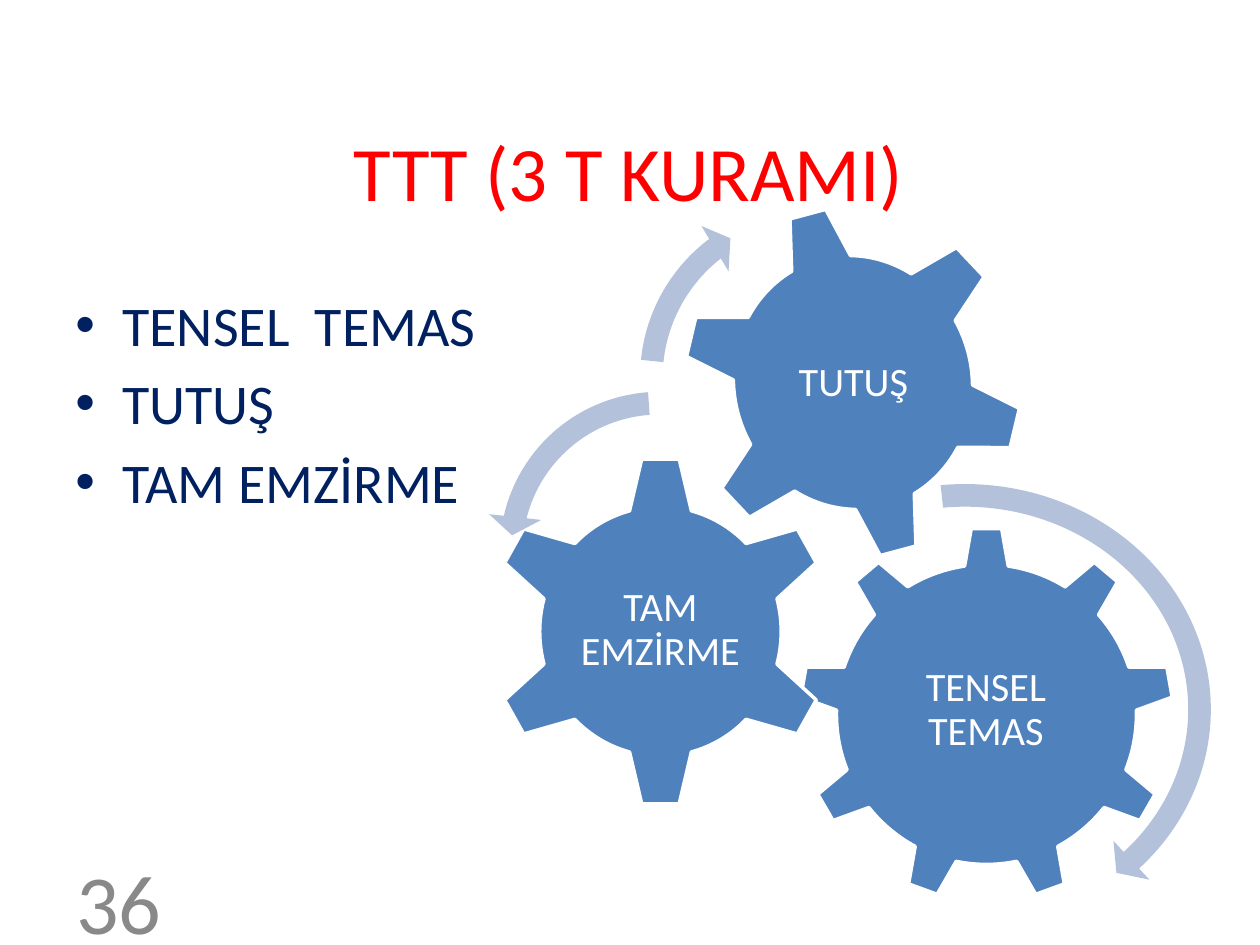
from dataclasses import dataclass

from lxml import etree
from pptx import Presentation
from pptx.dml.color import RGBColor
from pptx.enum import shapes, text
from pptx.oxml.ns import qn
from pptx.util import Emu, Pt

PX = 914400 / 126
SHAPE = shapes.MSO_SHAPE
ALIGN = text.PP_ALIGN
ANCHOR = text.MSO_ANCHOR


@dataclass(frozen=True)
class Theme:
    font: str = "Calibri"
    title: str = "FF0000"
    body: str = "002060"
    number: str = "898989"
    gear: str = "4F81BD"
    arrow: str = "B3C1DB"
    white: str = "FFFFFF"
    title_size: int = 44
    body_size: int = 32
    number_size: int = 48
    label_size: int = 23


THEME = Theme()


def px(value):
    return Emu(round(value * PX))


def place(origin, box):
    """Turn a box relative to an origin into slide lengths."""
    left, top, width, height = box
    return px(origin[0] + left), px(origin[1] + top), px(width), px(height)


def add_frame(slide, position, anchor, inset=None):
    frame = slide.shapes.add_textbox(*position).text_frame
    frame.word_wrap = True
    frame.vertical_anchor = anchor
    if inset is not None:
        frame.margin_left = frame.margin_right = px(inset)
        frame.margin_top = frame.margin_bottom = px(inset)
    return frame


def add_run(paragraph, words, size, color):
    run = paragraph.add_run()
    run.text = words
    run.font.name = THEME.font
    run.font.size = Pt(size)
    run.font.color.rgb = RGBColor.from_string(color)


def add_bullet(paragraph, indent):
    properties = paragraph._p.get_or_add_pPr()
    properties.set("marL", str(px(indent)))
    properties.set("indent", str(-px(indent)))
    etree.SubElement(properties, qn("a:buFont")).set("typeface", "Arial")
    etree.SubElement(properties, qn("a:buChar")).set("char", "•")


def add_line(slide, box, words, size, color, align):
    """One line of text, centred vertically in its box."""
    paragraph = add_frame(slide, place((0, 0), box), ANCHOR.MIDDLE).paragraphs[0]
    paragraph.alignment = align
    add_run(paragraph, words, size, color)


def add_bullets(slide, box, items):
    frame = add_frame(slide, place((0, 0), box), ANCHOR.TOP)
    for index, words in enumerate(items):
        paragraph = frame.add_paragraph() if index else frame.paragraphs[0]
        add_bullet(paragraph, 47)
        if index:
            paragraph.space_before = Pt(THEME.body_size * 0.2)
        add_run(paragraph, words, THEME.body_size, THEME.body)


def add_filled(slide, kind, position, color, rotation):
    shape = slide.shapes.add_shape(kind, *position)
    shape.shadow.inherit = False
    shape.rotation = rotation
    shape.fill.solid()
    shape.fill.fore_color.rgb = RGBColor.from_string(color)
    shape.line.fill.background()
    return shape


def add_gear(slide, origin, kind, box, rotation, label_box, label):
    gear = add_filled(slide, kind, place(origin, box), THEME.gear, rotation)
    gear.line.color.rgb = RGBColor.from_string(THEME.white)
    gear.line.width = Pt(2)
    # The label stays upright when the gear is turned
    frame = add_frame(slide, place(origin, label_box), ANCHOR.MIDDLE, inset=4)
    paragraph = frame.paragraphs[0]
    paragraph.alignment = ALIGN.CENTER
    paragraph.line_spacing = 0.9
    add_run(paragraph, label, THEME.label_size, THEME.white)


def add_turn_arrow(slide, origin, kind, box, rotation, adjustments):
    arrow = add_filled(slide, kind, place(origin, box), THEME.arrow, rotation)
    for index, value in enumerate(adjustments):
        arrow.adjustments[index] = value


def add_gear_diagram(slide, origin):
    # Gears: kind, box, rotation, label box, label
    gears = [
        (SHAPE.GEAR_9, (314, 338, 375, 375), 0, (389, 425, 224, 193), "TENSEL TEMAS"),
        (SHAPE.GEAR_6, (3, 266, 345, 353), 0, (90, 354, 171, 175), "TAM EMZİRME"),
        (SHAPE.GEAR_6, (198, 15, 340, 357), 345, (272, 95, 193, 198), "TUTUŞ"),
    ]
    for gear in gears:
        add_gear(slide, origin, *gear)

    # Turning arrows: kind, box, rotation, adjustments
    arrows = [
        (SHAPE.CIRCULAR_ARROW, (219, 280, 522, 481), 0,
         (0.047, 2.99, 25.318, 158.279, 0.055)),
        (SHAPE.LEFT_CIRCULAR_ARROW, (0, 188, 349, 349), 18.6,
         (0.065, 4.3, 104.891, 148.378, 0.075)),
        (SHAPE.CIRCULAR_ARROW, (140, 0, 377, 377), 10.7,
         (0.06, 3.941, 133.138, 105.082, 0.07)),
    ]
    for arrow in arrows:
        add_turn_arrow(slide, origin, *arrow)


def main():
    presentation = Presentation()
    presentation.slide_width = px(1260)
    presentation.slide_height = px(945)
    slide = presentation.slides.add_slide(presentation.slide_layouts[6])

    # Title, list and page number
    add_line(slide, (62, 92, 1134, 158), "TTT (3 T KURAMI)",
             THEME.title_size, THEME.title, ALIGN.CENTER)
    add_bullets(slide, (63, 284, 1134, 561),
                ["TENSEL  TEMAS", "TUTUŞ", "TAM EMZİRME"])
    add_line(slide, (64, 876, 294, 50), "36",
             THEME.number_size, THEME.number, ALIGN.LEFT)

    # Interlocking gears
    add_gear_diagram(slide, (485, 189))

    presentation.save("out.pptx")


if __name__ == "__main__":
    main()
